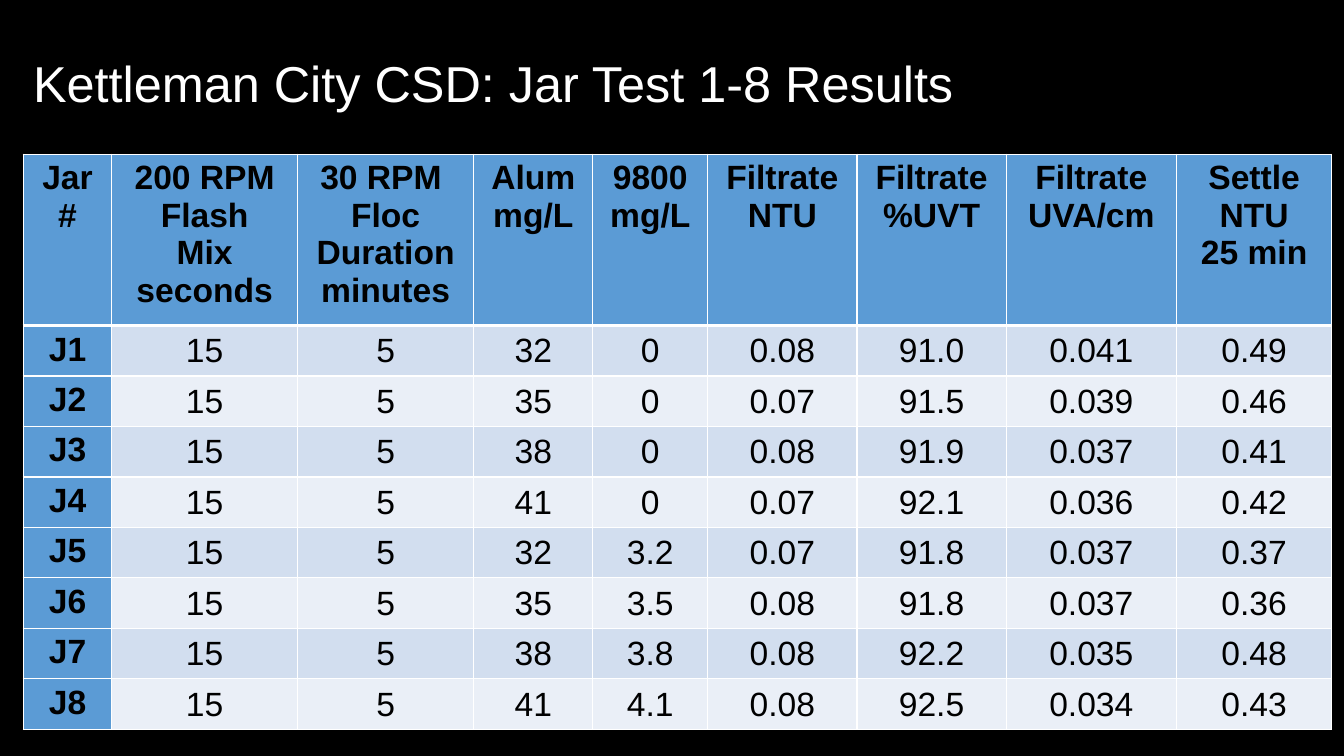
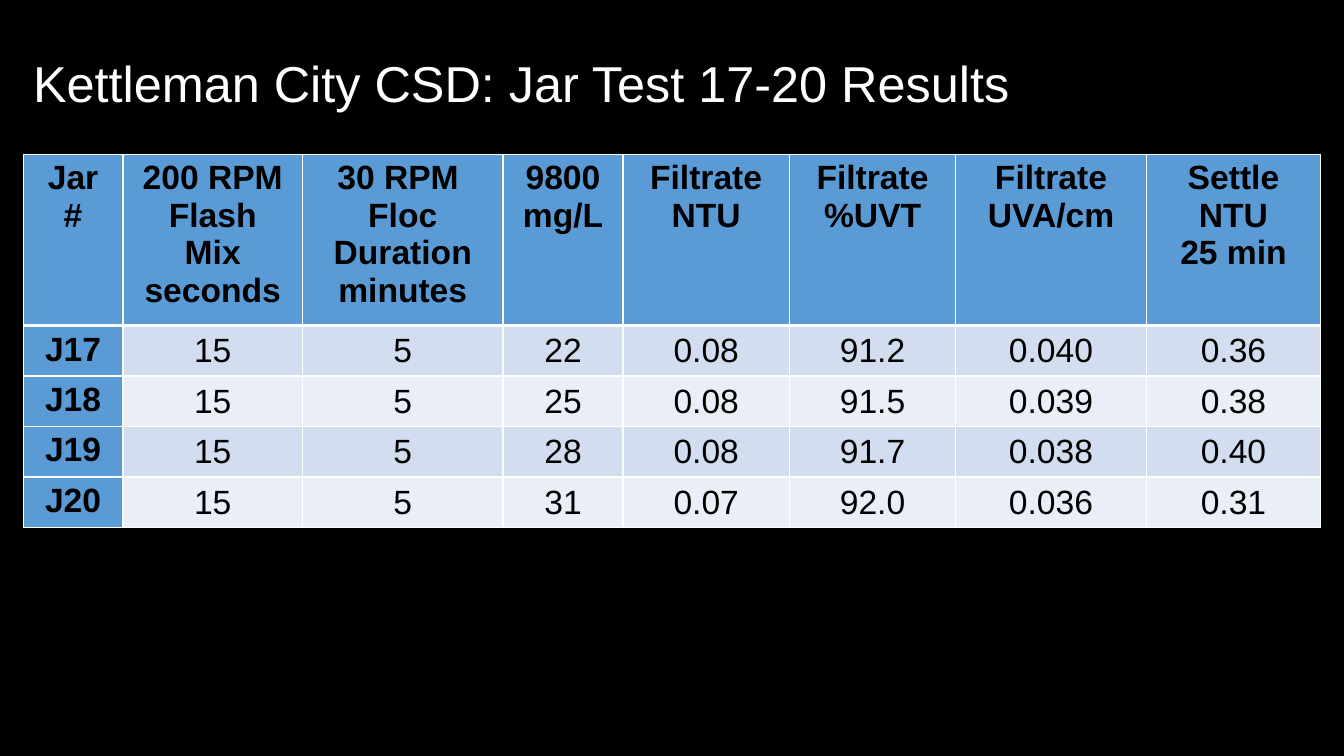
from dataclasses import dataclass

from lxml.etree import SubElement
from pptx import Presentation
from pptx.dml.color import RGBColor
from pptx.enum.text import MSO_ANCHOR, PP_ALIGN
from pptx.oxml.ns import qn
from pptx.presentation import Presentation as Deck
from pptx.slide import Slide
from pptx.table import _Cell as Cell
from pptx.text.text import TextFrame
from pptx.util import Inches, Pt

BLACK = RGBColor(0x00, 0x00, 0x00)
WHITE = RGBColor(0xFF, 0xFF, 0xFF)
BLUE = RGBColor(0x5B, 0x9B, 0xD5)
BANDS = (RGBColor(0xD2, 0xDE, 0xEF), RGBColor(0xEA, 0xEF, 0xF7))

FONT = "Arial"
LEFT = Inches(0.23)
TOP = Inches(1.53)
HEAD_H = Inches(1.59)
ROW_H = Inches(0.47)
THIN, THICK = Pt(1), Pt(3)

SETUP = ("Jar\n#", "200 RPM\nFlash\nMix\nseconds", "30 RPM \nFloc\nDuration\nminutes")
DOSE = "9800\nmg/L"
RESULTS = ("Filtrate\nNTU", "Filtrate\n%UVT", "Filtrate\nUVA/cm", "Settle\nNTU\n25 min")


@dataclass(frozen=True)
class JarTest:
    title: str
    heads: tuple[str, ...]
    widths: tuple[float, ...]
    rows: tuple[str, ...]


TESTS = (
    JarTest(
        "Kettleman City CSD: Jar Test 1-8 Results",
        (*SETUP, "Alum\nmg/L", DOSE, *RESULTS),
        (0.88, 1.84, 1.75, 1.18, 1.14, 1.48, 1.48, 1.69, 1.54),
        (
            "J1 15 5 32 0 0.08 91.0 0.041 0.49",
            "J2 15 5 35 0 0.07 91.5 0.039 0.46",
            "J3 15 5 38 0 0.08 91.9 0.037 0.41",
            "J4 15 5 41 0 0.07 92.1 0.036 0.42",
            "J5 15 5 32 3.2 0.07 91.8 0.037 0.37",
            "J6 15 5 35 3.5 0.08 91.8 0.037 0.36",
            "J7 15 5 38 3.8 0.08 92.2 0.035 0.48",
            "J8 15 5 41 4.1 0.08 92.5 0.034 0.43",
        ),
    ),
    JarTest(
        "Kettleman City CSD: Jar Test 17-20 Results",
        (*SETUP, DOSE, *RESULTS),
        (0.99, 1.78, 1.99, 1.19, 1.65, 1.65, 1.89, 1.73),
        (
            "J17 15 5 22 0.08 91.2 0.040 0.36",
            "J18 15 5 25 0.08 91.5 0.039 0.38",
            "J19 15 5 28 0.08 91.7 0.038 0.40",
            "J20 15 5 31 0.07 92.0 0.036 0.31",
        ),
    ),
)


def style_text(frame: TextFrame, size: int, color: RGBColor, bold: bool = False) -> None:
    for para in frame.paragraphs:
        for run in para.runs:
            run.font.name = FONT
            run.font.size = Pt(size)
            run.font.bold = bold
            run.font.color.rgb = color


def add_title(slide: Slide, text: str) -> None:
    box = slide.shapes.add_textbox(LEFT, Inches(0.13), Inches(12.7), Inches(1.45))
    frame = box.text_frame
    frame.word_wrap = True
    frame.vertical_anchor = MSO_ANCHOR.MIDDLE
    frame.text = text
    frame.paragraphs[0].line_spacing = 0.9
    style_text(frame, 36, WHITE)


def set_borders(cell: Cell, top: Pt, bottom: Pt) -> None:
    props = cell._tc.get_or_add_tcPr()
    for side, width in (("L", THIN), ("R", THIN), ("T", top), ("B", bottom)):
        line = SubElement(props, qn(f"a:ln{side}"), w=str(width))
        fill = SubElement(line, qn("a:solidFill"))
        SubElement(fill, qn("a:srgbClr"), val=str(WHITE))


def fill_cell(cell: Cell, text: str, row: int, col: int) -> None:
    label = row == 0 or col == 0
    set_borders(cell, THICK if row == 1 else THIN, THICK if row == 0 else THIN)
    cell.fill.solid()
    cell.fill.fore_color.rgb = BLUE if label else BANDS[(row - 1) % 2]
    if not label:
        cell.vertical_anchor = MSO_ANCHOR.MIDDLE
        cell.margin_left = cell.margin_right = cell.margin_top = Inches(0.01)
        cell.margin_bottom = Inches(0)
    frame = cell.text_frame
    frame.text = text
    for para in frame.paragraphs:
        para.alignment = PP_ALIGN.CENTER
    style_text(frame, 24, BLACK, label)


def add_results(slide: Slide, test: JarTest) -> None:
    grid = (test.heads, *(row.split() for row in test.rows))
    width = Inches(sum(test.widths))
    height = HEAD_H + ROW_H * len(test.rows)
    table = slide.shapes.add_table(
        len(grid), len(test.heads), LEFT, TOP, width, height
    ).table
    table.first_col = True
    for column, size in zip(table.columns, test.widths):
        column.width = Inches(size)
    for r, texts in enumerate(grid):
        table.rows[r].height = ROW_H if r else HEAD_H
        for c, text in enumerate(texts):
            fill_cell(table.cell(r, c), text, r, c)


def add_test(deck: Deck, test: JarTest) -> None:
    slide = deck.slides.add_slide(deck.slide_layouts[6])
    add_title(slide, test.title)
    add_results(slide, test)


def main() -> None:
    deck = Presentation()
    deck.slide_width = Inches(13.33)
    deck.slide_height = Inches(7.5)
    back = deck.slide_master.background.fill
    back.solid()
    back.fore_color.rgb = BLACK
    for test in TESTS:
        add_test(deck, test)
    deck.save("out.pptx")


if __name__ == "__main__":
    main()
